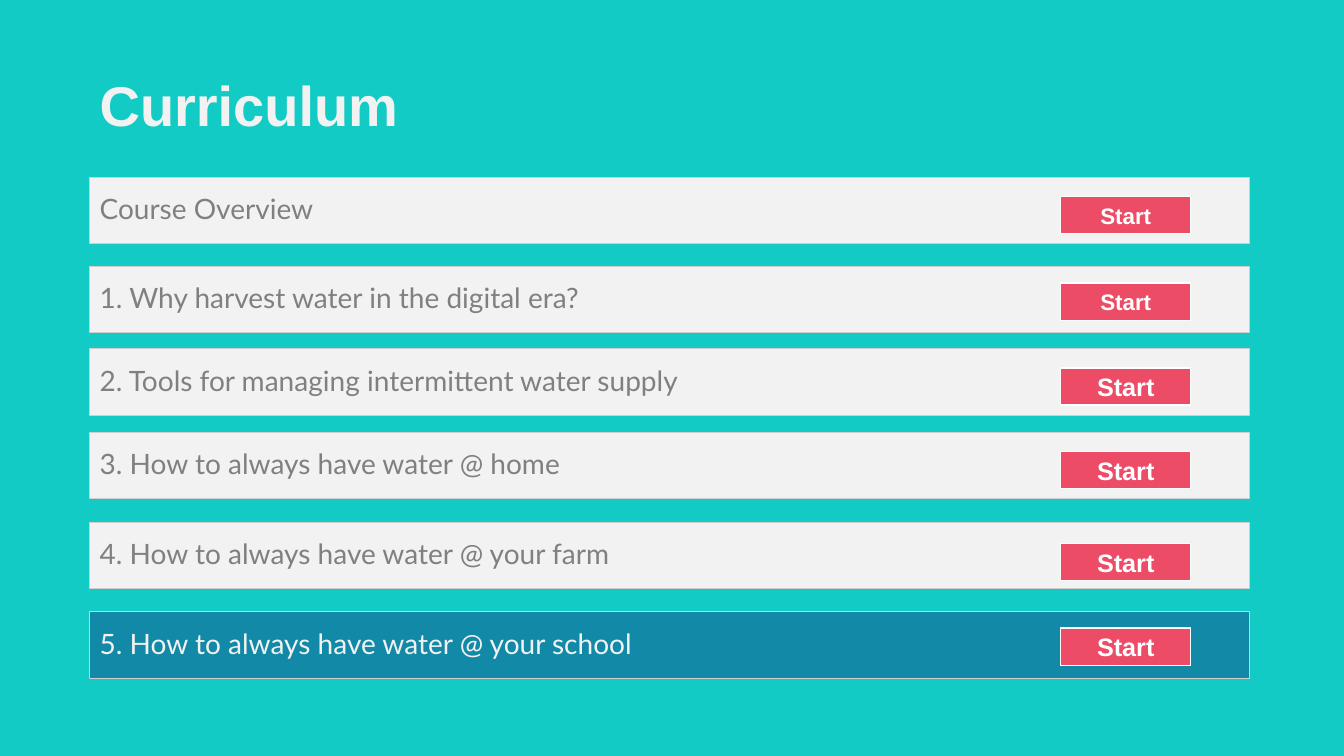
from pptx import Presentation
from pptx.dml.color import RGBColor
from pptx.enum import shapes, text
from pptx.util import Inches, Pt

TEAL = RGBColor(0x12, 0xCB, 0xC4)
BLUE = RGBColor(0x12, 0x89, 0xA7)
PALE = RGBColor(0xF2, 0xF2, 0xF2)
GRAY = RGBColor(0x80, 0x80, 0x80)
EDGE = RGBColor(0xD0, 0xCE, 0xCE)
PINK = RGBColor(0xED, 0x4C, 0x67)
WHITE = RGBColor(0xFF, 0xFF, 0xFF)

LEFT, WIDTH = 0.89, 11.5

# Lesson, top of its bar, drop from bar top to button, button text size
LESSONS = [
    ("Course Overview", 1.76, 0.19, 16),
    ("1. Why harvest water in the digital era?", 2.64, 0.17, 16),
    ("2. Tools for managing intermittent water supply", 3.46, 0.19, 18),
    ("3. How to always have water @ home", 4.29, 0.19, 18),
    ("4. How to always have water @ your farm", 5.18, 0.21, 18),
    ("5. How to always have water @ your school", 6.07, 0.16, 18),
]


def write(shape, words, size, color, font="Arial", bold=False,
          align=text.PP_ALIGN.LEFT, space=1.0):
    frame = shape.text_frame
    frame.word_wrap = True
    frame.vertical_anchor = text.MSO_ANCHOR.MIDDLE
    para = frame.paragraphs[0]
    para.alignment = align
    para.line_spacing = space
    run = para.add_run()
    run.text = words
    run.font.name = font
    run.font.size = Pt(size)
    run.font.bold = bold
    run.font.color.rgb = color


def block(slide, box, fill, line, weight):
    shape = slide.shapes.add_shape(
        shapes.MSO_SHAPE.RECTANGLE, *map(Inches, box))
    shape.shadow.inherit = False
    shape.fill.solid()
    shape.fill.fore_color.rgb = fill
    shape.line.color.rgb = line
    shape.line.width = Pt(weight)
    return shape


def title(slide, box):
    label = slide.shapes.add_textbox(*map(Inches, box))
    write(label, "Curriculum", 40, PALE, bold=True, space=0.9)


def lesson(slide, box, words, drop, size, active):
    left, top, width, _ = box
    # Bar, highlighted for the active lesson
    bar = block(slide, box, BLUE if active else PALE, EDGE, 0.75)
    write(bar, words, 20, PALE if active else GRAY, font="Lato", space=0.9)
    # Start button near the right end
    button = block(slide, (left + width - 1.87, top + drop, 1.29, 0.37),
                   PINK, WHITE, 1)
    write(button, "Start", size, WHITE, bold=True,
          align=text.PP_ALIGN.CENTER)


def main():
    deck = Presentation()
    deck.slide_width = Inches(13.33)
    deck.slide_height = Inches(7.5)
    slide = deck.slides.add_slide(deck.slide_layouts[6])
    slide.background.fill.solid()
    slide.background.fill.fore_color.rgb = TEAL

    title(slide, (LEFT, 0.69, WIDTH, 0.77))
    for words, top, drop, size in LESSONS:
        lesson(slide, (LEFT, top, WIDTH, 0.66), words, drop, size,
               active=words == LESSONS[-1][0])
    deck.save("out.pptx")


if __name__ == "__main__":
    main()
